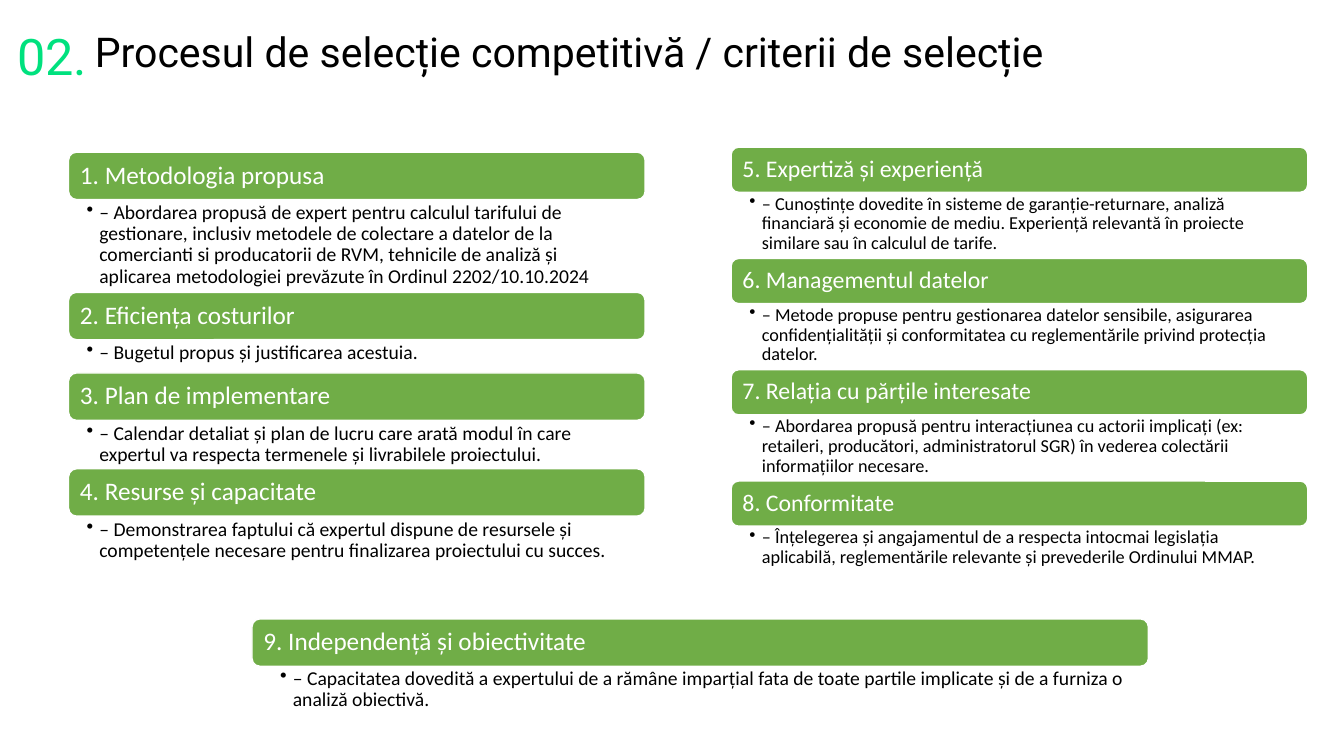
"""Builds the slide on competitive selection criteria."""
import dataclasses

import lxml.etree
import pptx
import pptx.dml.color
import pptx.enum.shapes
import pptx.enum.text
import pptx.oxml.ns
import pptx.util

SLIDE_WIDTH = pptx.util.Inches(13.33)
SLIDE_HEIGHT = pptx.util.Inches(7.5)


@dataclasses.dataclass(frozen=True)
class Theme:
    """Colours, fonts and type sizes of the slide."""
    ink: str = "000000"
    paper: str = "FFFFFF"
    bar: str = "70AD47"
    accent: str = "00E17E"
    title_font: str = "Roboto"
    list_font: str = "Calibri"
    title_size: float = 29.3
    number_size: float = 36
    title_leading: float = 28.8
    number_leading: float = 47.3
    list_leading: float = 0.9


@dataclasses.dataclass(frozen=True)
class Block:
    """Grid position, type sizes and criteria of one list of criteria."""
    left: float
    top: float
    width: float
    bar_height: float
    heading_size: float
    detail_size: float
    detail_insets: tuple
    criteria: tuple


THEME = Theme()

BLOCKS = (
    Block(5.1, 20.13, 42.9, 6.27, 18, 14, (1.35, 0.4, 1.05, 0.4), (
        ("1. Metodologia propusa", 12.27,
         "– Abordarea propusă de expert pentru calculul tarifului de gestionare, "
         "inclusiv metodele de colectare a datelor de la comercianti si producatorii "
         "de RVM, tehnicile de analiză și aplicarea metodologiei prevăzute în "
         "Ordinul 2202/10.10.2024"),
        ("2. Eficiența costurilor", 4.4,
         "– Bugetul propus și justificarea acestuia."),
        ("3. Plan de implementare", 6.4,
         "– Calendar detaliat și plan de lucru care arată modul în care expertul "
         "va respecta termenele și livrabilele proiectului."),
        ("4. Resurse și capacitate", 6.4,
         "– Demonstrarea faptului că expertul dispune de resursele și competențele "
         "necesare pentru finalizarea proiectului cu succes."),
    )),
    Block(54.4, 19.47, 42.9, 5.97, 17, 13, (1.35, 0.27, 0.98, 0.27), (
        ("5. Expertiză și experiență", 8.75,
         "– Cunoștințe dovedite în sisteme de garanție-returnare, analiză financiară "
         "și economie de mediu. Experiență relevantă în proiecte similare sau în "
         "calculul de tarife."),
        ("6. Managementul datelor", 8.75,
         "– Metode propuse pentru gestionarea datelor sensibile, asigurarea "
         "confidențialității și conformitatea cu reglementările privind protecția "
         "datelor."),
        ("7. Relația cu părțile interesate", 8.75,
         "– Abordarea propusă pentru interacțiunea cu actorii implicați (ex: "
         "retaileri, producători, administratorul SGR) în vederea colectării "
         "informațiilor necesare."),
        ("8. Conformitate", 6,
         "– Înțelegerea și angajamentul de a respecta intocmai legislația "
         "aplicabilă, reglementările relevante și prevederile Ordinului MMAP."),
    )),
    Block(18.75, 81.87, 66.7, 6.27, 18, 14, (2.1, 0.27, 0.83, 0.27), (
        ("9. Independență și obiectivitate", 6.27,
         "– Capacitatea dovedită a expertului de a rămâne imparțial fata de toate "
         "partile implicate și de a furniza o analiză obiectivă."),
    )),
)


def columns(count):
    """Return the width of a number of hundredths of the slide."""
    return round(SLIDE_WIDTH * count / 100)


def rows(count):
    """Return the height of a number of hundredths of the slide."""
    return round(SLIDE_HEIGHT * count / 100)


def place(left, top, width, height):
    """Turn grid units into slide lengths."""
    return columns(left), rows(top), columns(width), rows(height)


def colour(code):
    """Return the colour of a hexadecimal code."""
    return pptx.dml.color.RGBColor.from_string(code)


def apply(target, formats):
    """Set each attribute of the target from a dict."""
    for attribute, value in formats.items():
        setattr(target, attribute, value)


def write(holder, words, font, size, ink, leading, insets, anchor):
    """Write one formatted paragraph in a shape and return it."""
    left, top, right, bottom = insets
    apply(holder.text_frame, {
        "word_wrap": True,
        "vertical_anchor": anchor,
        "margin_left": columns(left),
        "margin_top": rows(top),
        "margin_right": columns(right),
        "margin_bottom": rows(bottom),
    })
    paragraph = holder.text_frame.paragraphs[0]
    apply(paragraph, {
        "alignment": pptx.enum.text.PP_ALIGN.LEFT,
        "line_spacing": leading,
    })
    run = paragraph.add_run()
    run.text = words
    apply(run.font, {"name": font, "size": pptx.util.Pt(size)})
    run.font.color.rgb = colour(ink)
    return paragraph


def add_title_part(slide, position, words, size, ink, leading):
    """Add one part of the slide title."""
    part = slide.shapes.add_textbox(*place(*position))
    write(part, words, THEME.title_font, size, ink, pptx.util.Pt(leading),
          (0, 0, 0, 0), pptx.enum.text.MSO_ANCHOR.TOP)


def add_heading(group, position, words, size):
    """Add the rounded bar that names a criterion."""
    bar = group.shapes.add_shape(
        pptx.enum.shapes.MSO_SHAPE.ROUNDED_RECTANGLE, *place(*position))
    bar.shadow.inherit = False
    bar.fill.solid()
    bar.fill.fore_color.rgb = colour(THEME.bar)
    bar.line.color.rgb = colour(THEME.paper)
    bar.line.width = pptx.util.Pt(1)
    write(bar, words, THEME.list_font, size, THEME.paper, THEME.list_leading,
          (0.68, 0.93, 0.68, 0.93), pptx.enum.text.MSO_ANCHOR.MIDDLE)


def add_detail(group, position, words, size, insets):
    """Add the bulleted description of a criterion."""
    detail = group.shapes.add_textbox(*place(*position))
    paragraph = write(detail, words, THEME.list_font, size, THEME.ink,
                      THEME.list_leading, insets, pptx.enum.text.MSO_ANCHOR.TOP)
    paragraph.level = 1
    properties = paragraph._p.get_or_add_pPr()
    indent = columns(0.94)
    properties.set("marL", str(indent))
    properties.set("indent", str(-indent))
    bullet = lxml.etree.SubElement(properties, pptx.oxml.ns.qn("a:buChar"))
    bullet.set("char", "•")


def add_block(slide, block):
    """Stack the headings and details of one block of criteria."""
    group = slide.shapes.add_group_shape()
    top = block.top
    for heading, detail_height, detail in block.criteria:
        add_heading(group, (block.left, top, block.width, block.bar_height),
                    heading, block.heading_size)
        top += block.bar_height
        add_detail(group, (block.left, top, block.width, detail_height),
                   detail, block.detail_size, block.detail_insets)
        top += detail_height


def main():
    """Build and save the slide."""
    deck = pptx.Presentation()
    apply(deck, {"slide_width": SLIDE_WIDTH, "slide_height": SLIDE_HEIGHT})
    slide = deck.slides.add_slide(deck.slide_layouts[6])
    add_title_part(slide, (7.05, 4.67, 78.4, 5.6),
                   "Procesul de selecție competitivă / criterii de selecție",
                   THEME.title_size, THEME.ink, THEME.title_leading)
    add_title_part(slide, (1.28, 2.53, 5.78, 8.53), "02.",
                   THEME.number_size, THEME.accent, THEME.number_leading)
    for block in BLOCKS:
        add_block(slide, block)
    deck.save("out.pptx")


if __name__ == "__main__":
    main()
